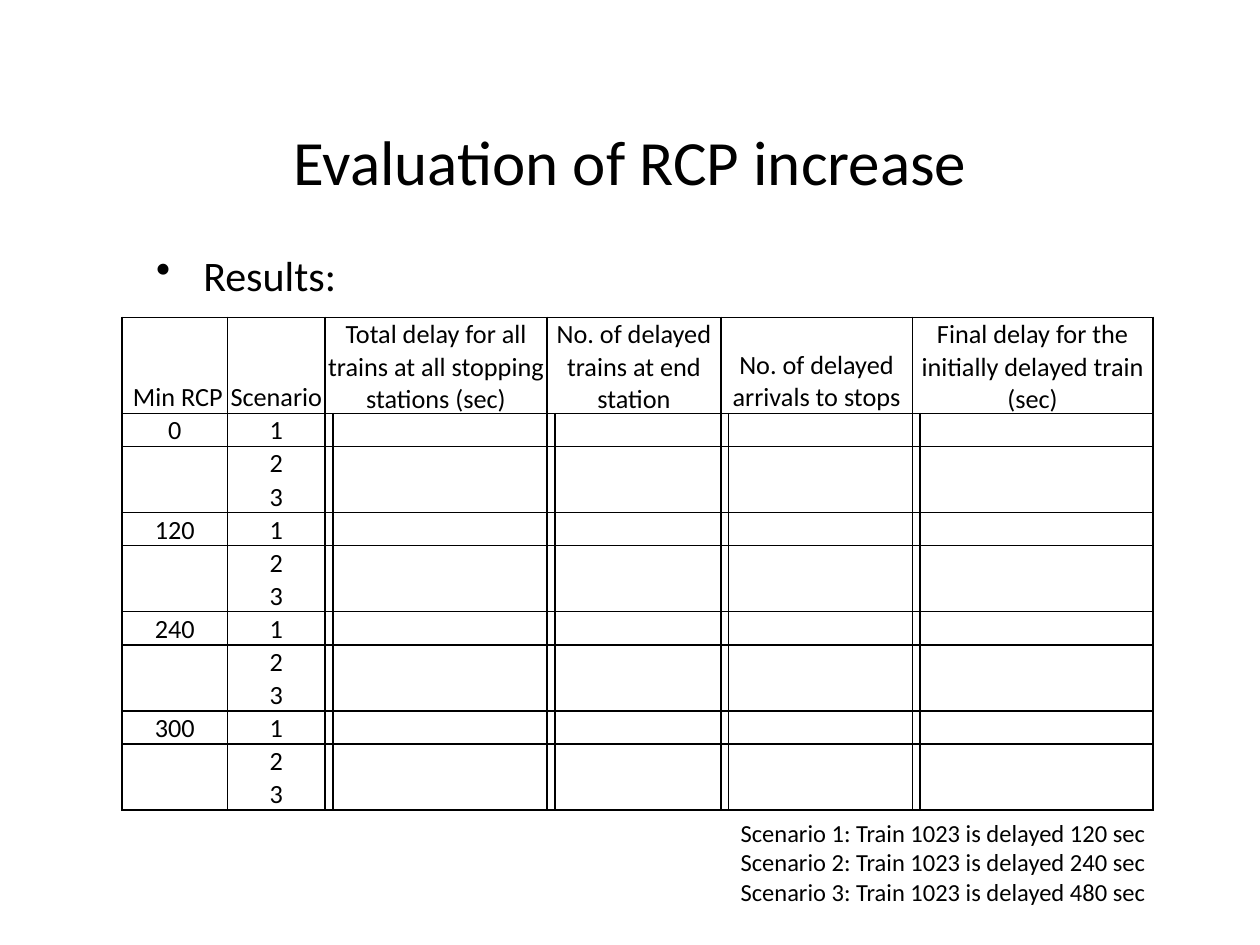
from dataclasses import dataclass
from typing import Any

import lxml.etree
import pptx
import pptx.dml.color
import pptx.enum.text
import pptx.oxml.ns
import pptx.util

Cm = pptx.util.Cm
Pt = pptx.util.Pt
qn = pptx.oxml.ns.qn
Align = pptx.enum.text.PP_ALIGN
Anchor = pptx.enum.text.MSO_ANCHOR


@dataclass(frozen=True)
class Theme:
    font: str = "Calibri"
    ink: str = "000000"
    title: int = 36
    body: int = 24
    table: int = 15
    note: int = 14
    border: int = 1
    table_style: str = "{2D5ABB26-0587-4C30-8999-92F81FD0307C}"  # no style, no grid


@dataclass(frozen=True)
class TextBlock:
    left: float
    top: float
    width: float
    height: float
    lines: tuple[str, ...]
    size: int
    paragraph_format: dict[str, Any]
    wrap: bool = True
    margin: float = 0
    indent: float = 0
    bullet: str = ""


@dataclass(frozen=True)
class Column:
    header: str
    width: float
    spacer: float = 0  # narrow unruled column in front of the value column


THEME = Theme()

TEXT_BLOCKS = (
    TextBlock(0, 2.34, 25.4, 3.18, ("Evaluation of RCP increase",),
              THEME.title, {"alignment": Align.CENTER}),
    TextBlock(2.9, 4.9, 18.95, 12.98, ("Results:",), THEME.body,
              {"space_before": Pt(5)}, margin=0.95, indent=-0.95, bullet="•"),
    TextBlock(13.41, 16.36, 10.03, 2.57,
              tuple(f"Scenario {number}: Train 1023 is delayed {delay} sec"
                    for number, delay in enumerate((120, 240, 480), 1)),
              THEME.note, {"level": 1}, wrap=False, margin=1.27),
)

COLUMNS = (
    Column(" Min RCP", 2.13),
    Column("Scenario ", 1.96),
    Column("Total delay for all trains at all stopping stations (sec)", 4.32, 0.13),
    Column("No. of delayed trains at end station", 3.34, 0.13),
    Column("No. of delayed arrivals to stops", 3.7, 0.15),
    Column("Final delay for the initially delayed train (sec)", 4.69, 0.13),
)
MIN_RCP = (0, 120, 240, 300)
SCENARIOS = (1, 2, 3)
TABLE_LEFT, TABLE_TOP = 2.46, 6.4
HEADER_HEIGHT, ROW_HEIGHT = 1.8, 0.61
CELL_FORMAT = {
    "vertical_anchor": Anchor.BOTTOM,
    "margin_left": Cm(0.03),
    "margin_right": Cm(0.03),
    "margin_top": Cm(0.03),
    "margin_bottom": Cm(0),
}


def apply_format(target: Any, values: dict[str, Any]) -> None:
    for name, value in values.items():
        setattr(target, name, value)


def write_text(paragraph: Any, text: str, size: int) -> None:
    run = paragraph.add_run()
    run.text = text
    apply_format(run.font, {"name": THEME.font, "size": Pt(size)})
    run.font.color.rgb = pptx.dml.color.RGBColor.from_string(THEME.ink)


def draw_text_block(slide: Any, block: TextBlock) -> None:
    shape = slide.shapes.add_textbox(
        Cm(block.left), Cm(block.top), Cm(block.width), Cm(block.height))
    frame = shape.text_frame
    frame.word_wrap = block.wrap
    for index, line in enumerate(block.lines):
        paragraph = frame.add_paragraph() if index else frame.paragraphs[0]
        apply_format(paragraph, block.paragraph_format)
        write_text(paragraph, line, block.size)
        properties = paragraph._p.get_or_add_pPr()
        properties.set("marL", str(Cm(block.margin)))
        properties.set("indent", str(Cm(block.indent)))
        if block.bullet:
            bullet = lxml.etree.SubElement(properties, qn("a:buChar"))
            bullet.set("char", block.bullet)


def draw_borders(cell: Any, sides: str) -> None:
    properties = cell._tc.get_or_add_tcPr()
    for side in sides:
        line = lxml.etree.SubElement(properties, qn(f"a:ln{side}"))
        line.set("w", str(Pt(THEME.border)))
        fill = lxml.etree.SubElement(line, qn("a:solidFill"))
        lxml.etree.SubElement(fill, qn("a:srgbClr")).set("val", THEME.ink)


def fill_cell(cell: Any, text: str, sides: str) -> None:
    apply_format(cell, CELL_FORMAT)
    draw_borders(cell, sides)
    cell.fill.background()
    paragraph = cell.text_frame.paragraphs[0]
    paragraph.alignment = Align.CENTER
    if text:
        write_text(paragraph, text, THEME.table)
    else:
        # Keeps an empty cell from stretching its row
        end = lxml.etree.SubElement(paragraph._p, qn("a:endParaRPr"))
        end.set("sz", str(THEME.table * 100))


def draw_results_table(slide: Any) -> None:
    # One grid column per width; a spacer is merged with its value column in the header
    grid = []
    for column in COLUMNS:
        if column.spacer:
            grid += [(column.header, column.spacer, "L"), ("", column.width, "R")]
        else:
            grid.append((column.header, column.width, "LR"))
    row_count = 1 + len(MIN_RCP) * len(SCENARIOS)
    shape = slide.shapes.add_table(
        row_count, len(grid), Cm(TABLE_LEFT), Cm(TABLE_TOP),
        Cm(sum(width for _, width, _ in grid)),
        Cm(HEADER_HEIGHT + ROW_HEIGHT * (row_count - 1)))
    table = shape.table
    apply_format(table, {"first_row": False, "horz_banding": False})
    table._tbl.tblPr.find(qn("a:tableStyleId")).text = THEME.table_style
    for index, row in enumerate(table.rows):
        row.height = Cm(ROW_HEIGHT if index else HEADER_HEIGHT)

    # Header
    for index, (header, width, sides) in enumerate(grid):
        table.columns[index].width = Cm(width)
        fill_cell(table.cell(0, index), header, "LRTB")
        if sides == "L":
            table.cell(0, index).merge(table.cell(0, index + 1))

    # One ruled group of scenarios for each minimum RCP
    for row in range(1, row_count):
        group, step = divmod(row - 1, len(SCENARIOS))
        first, last = step == 0, step == len(SCENARIOS) - 1
        labels = (str(MIN_RCP[group]) if first else "", str(SCENARIOS[step]))
        for index, (_, _, sides) in enumerate(grid):
            text = labels[index] if index < len(labels) else ""
            rules = sides + ("T" if first else "") + ("B" if last else "")
            fill_cell(table.cell(row, index), text, rules)


def main() -> None:
    presentation = pptx.Presentation()
    apply_format(presentation, {"slide_width": Cm(25.4), "slide_height": Cm(19.05)})
    slide = presentation.slides.add_slide(presentation.slide_layouts[6])
    title, results, scenario_note = TEXT_BLOCKS
    draw_text_block(slide, title)
    draw_text_block(slide, results)
    draw_results_table(slide)
    draw_text_block(slide, scenario_note)
    presentation.save("out.pptx")


if __name__ == "__main__":
    main()
